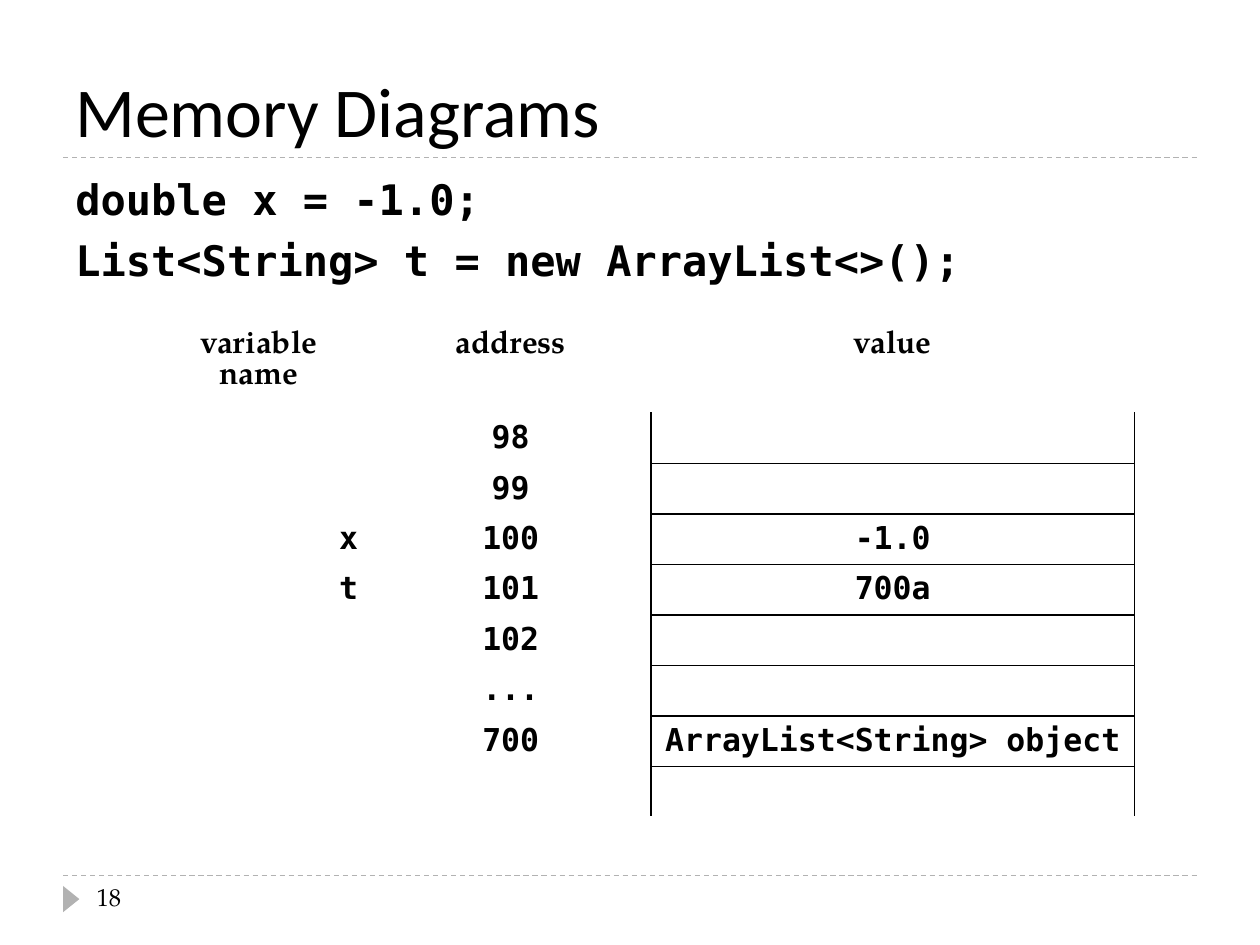
import pptx
import pptx.util
import pptx.dml.color
import pptx.enum.dml
import pptx.enum.shapes
import pptx.enum.text
import pptx.oxml
import pptx.oxml.ns

Cm, Pt = pptx.util.Cm, pptx.util.Pt
RGB = pptx.dml.color.RGBColor
BLACK, WHITE, GREY = RGB(0, 0, 0), RGB(255, 255, 255), RGB(0xB2, 0xB2, 0xB2)
ALIGN, ANCHOR = pptx.enum.text.PP_ALIGN, pptx.enum.text.MSO_ANCHOR
SANS, MONO, SERIF = "Calibri", "DejaVu Sans Mono", "TeX Gyre Pagella"

TITLE = "Memory Diagrams"
CODE = ["double x = -1.0;", "List<String> t = new ArrayList<>();"]
PAGE = "18"
HEADS = ("variable name", "address", "value")
CELLS = [
    ("", "98", ""),
    ("", "99", ""),
    ("x", "100", "-1.0"),
    ("t", "101", "700a"),
    ("", "102", ""),
    ("", "...", ""),
    ("", "700", "ArrayList<String> object"),
    ("", "", ""),
]
WIDTHS = (4.5, 5.65, 9.75)
HEAD_H, ROW_H = 1.52, 1.01
RULES = (3.17, 17.65)


def write(para, text, font, size, bold=False):
    run = para.add_run()
    run.text = text
    run.font.name, run.font.size, run.font.bold = font, Pt(size), bold
    run.font.color.rgb = BLACK


def add_text(slide, box, lines, font, size, bold=False, gap=0, anchor=ANCHOR.TOP):
    frame = slide.shapes.add_textbox(*map(Cm, box)).text_frame
    frame.word_wrap, frame.vertical_anchor = True, anchor
    for i, line in enumerate(lines):
        para = frame.add_paragraph() if i else frame.paragraphs[0]
        para.space_before = Pt(gap)
        write(para, line, font, size, bold)


def add_rule(slide, y):
    line = slide.shapes.add_connector(
        pptx.enum.shapes.MSO_CONNECTOR.STRAIGHT, Cm(1.27), Cm(y), Cm(24.13), Cm(y))
    line.line.color.rgb, line.line.width = GREY, Pt(0.75)
    line.line.dash_style = pptx.enum.dml.MSO_LINE.DASH
    props = line._element.spPr
    props.append(props.makeelement(pptx.oxml.ns.qn("a:effectLst"), {}))


def add_mark(slide):
    mark = slide.shapes.add_shape(
        pptx.enum.shapes.MSO_SHAPE.ISOSCELES_TRIANGLE,
        Cm(1.17), Cm(17.96), Cm(0.53), Cm(0.33))
    mark.rotation = 90
    mark.shadow.inherit = False
    mark.fill.solid()
    mark.fill.fore_color.rgb = GREY
    mark.line.fill.background()


def border(cell, sides):
    """Draw black 1 pt lines on the given sides, in the order L, R, T, B."""
    props = cell._tc.get_or_add_tcPr()
    for side in sides:
        props.append(pptx.oxml.parse_xml(
            f'<a:ln{side} {pptx.oxml.ns.nsdecls("a")} w="{Pt(1)}">'
            f'<a:solidFill><a:srgbClr val="{BLACK}"/></a:solidFill></a:ln{side}>'))


def add_memory(slide):
    rows = [HEADS] + CELLS
    last = len(rows) - 1
    table = slide.shapes.add_table(
        len(rows), len(HEADS), Cm(2.97), Cm(6.55),
        Cm(sum(WIDTHS)), Cm(HEAD_H + last * ROW_H)).table
    table.first_row = table.horz_banding = False
    for col, width in zip(table.columns, WIDTHS):
        col.width = Cm(width)
    for r, row in enumerate(rows):
        table.rows[r].height = Cm(ROW_H if r else HEAD_H)
        for c, text in enumerate(row):
            cell = table.cell(r, c)
            para = cell.text_frame.paragraphs[0]
            para.alignment = ALIGN.RIGHT if r and c == 0 else ALIGN.CENTER
            if text:
                write(para, text, MONO if r else SERIF, 18, True)
            if r and c == 1:
                border(cell, "R")
            if r and c == 2:
                border(cell, "LR" + "T" * (r > 1) + "B" * (r < last))
                cell.fill.solid()
                cell.fill.fore_color.rgb = WHITE
            else:
                cell.fill.background()


def main():
    deck = pptx.Presentation()
    deck.slide_width, deck.slide_height = Cm(25.4), Cm(19.05)
    slide = deck.slides.add_slide(deck.slide_layouts[6])
    for y in RULES:
        add_rule(slide, y)
    add_mark(slide)
    add_text(slide, (1.27, 0.43, 22.86, 2.74), [TITLE], SANS, 40, anchor=ANCHOR.BOTTOM)
    add_text(slide, (1.27, 3.38, 22.86, 13.72), CODE, MONO, 24, True, 6)
    add_text(slide, (1.7, 17.65, 5.51, 1.02), [PAGE], SERIF, 14)
    add_memory(slide)
    deck.save("out.pptx")


if __name__ == "__main__":
    main()
